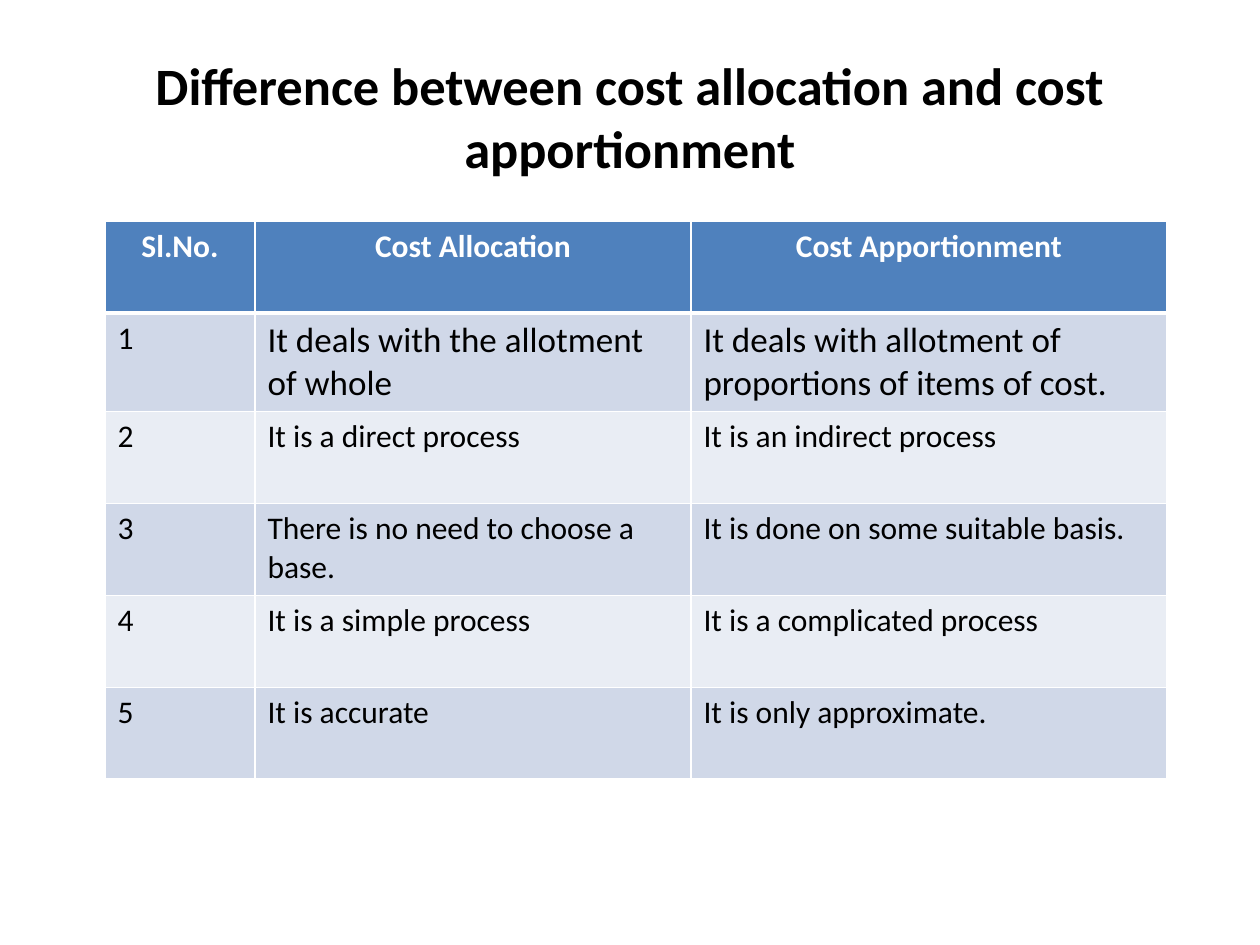
from lxml.etree import SubElement
from pptx import Presentation
from pptx.dml.color import RGBColor
from pptx.enum.text import MSO_ANCHOR, PP_ALIGN
from pptx.oxml.ns import qn
from pptx.util import Pt

TITLE = "Difference between cost allocation and cost apportionment"
HEAD = ("Sl.No.", "Cost Allocation", "Cost Apportionment")
ROWS = [
    ("It deals with the allotment of whole",
     "It deals with allotment of proportions of items of cost."),
    ("It is a direct process", "It is an indirect process"),
    ("There is no need to choose a base.", "It is done on some suitable basis."),
    ("It is a simple process", "It is a complicated process"),
    ("It is accurate", "It is only approximate."),
]
WIDTHS = (150, 436, 476)
ROW_H = 92
BLUE, BANDS = "4F81BD", ("D0D8E8", "E9EDF4")
BLACK, WHITE = "000000", "FFFFFF"


def px(n):
    return round(n * 914400 / 126)


def place(shape, x, y, w, h):
    shape.left, shape.top, shape.width, shape.height = map(px, (x, y, w, h))


def write(frame, text, size, color, bold, align):
    para = frame.paragraphs[0]
    para.alignment = align
    run = para.add_run()
    run.text = text
    font = run.font
    font.name, font.size, font.bold = "Calibri", Pt(size), bold
    font.color.rgb = RGBColor.from_string(color)


def edge(cell, side, width):
    """Draw a white border on one side (L, R, T or B) of a cell."""
    line = SubElement(cell._tc.get_or_add_tcPr(), qn(f"a:ln{side}"), w=str(Pt(width)))
    fill = SubElement(line, qn("a:solidFill"))
    SubElement(fill, qn("a:srgbClr"), val=WHITE)


def paint(cell, color, top, bottom):
    for side, width in (("L", 1), ("R", 1), ("T", top), ("B", bottom)):
        edge(cell, side, width)
    cell.fill.solid()
    cell.fill.fore_color.rgb = RGBColor.from_string(color)


def main():
    deck = Presentation()
    deck.slide_width, deck.slide_height = px(1260), px(945)
    slide = deck.slides.add_slide(deck.slide_layouts[5])

    title = slide.shapes.title
    place(title, 63, 38, 1134, 157)
    title.text_frame.vertical_anchor = MSO_ANCHOR.MIDDLE
    write(title.text_frame, TITLE, 30, BLACK, True, PP_ALIGN.CENTER)

    count = len(ROWS) + 1
    table = slide.shapes.add_table(
        count, len(HEAD), px(105), px(221), px(sum(WIDTHS)), px(ROW_H * count)).table
    for col, width in zip(table.columns, WIDTHS):
        col.width = px(width)
    for row in table.rows:
        row.height = px(ROW_H)

    for c, text in enumerate(HEAD):
        cell = table.cell(0, c)
        paint(cell, BLUE, 1, 3)
        write(cell.text_frame, text, 18, WHITE, True, PP_ALIGN.CENTER)
    for r, pair in enumerate(ROWS, 1):
        for c, text in enumerate((str(r), *pair)):
            cell = table.cell(r, c)
            paint(cell, BANDS[(r - 1) % 2], 3 if r == 1 else 1, 1)
            size = 20 if r == 1 and c else 18
            write(cell.text_frame, text, size, BLACK, False, PP_ALIGN.LEFT)

    deck.save("out.pptx")


if __name__ == "__main__":
    main()
